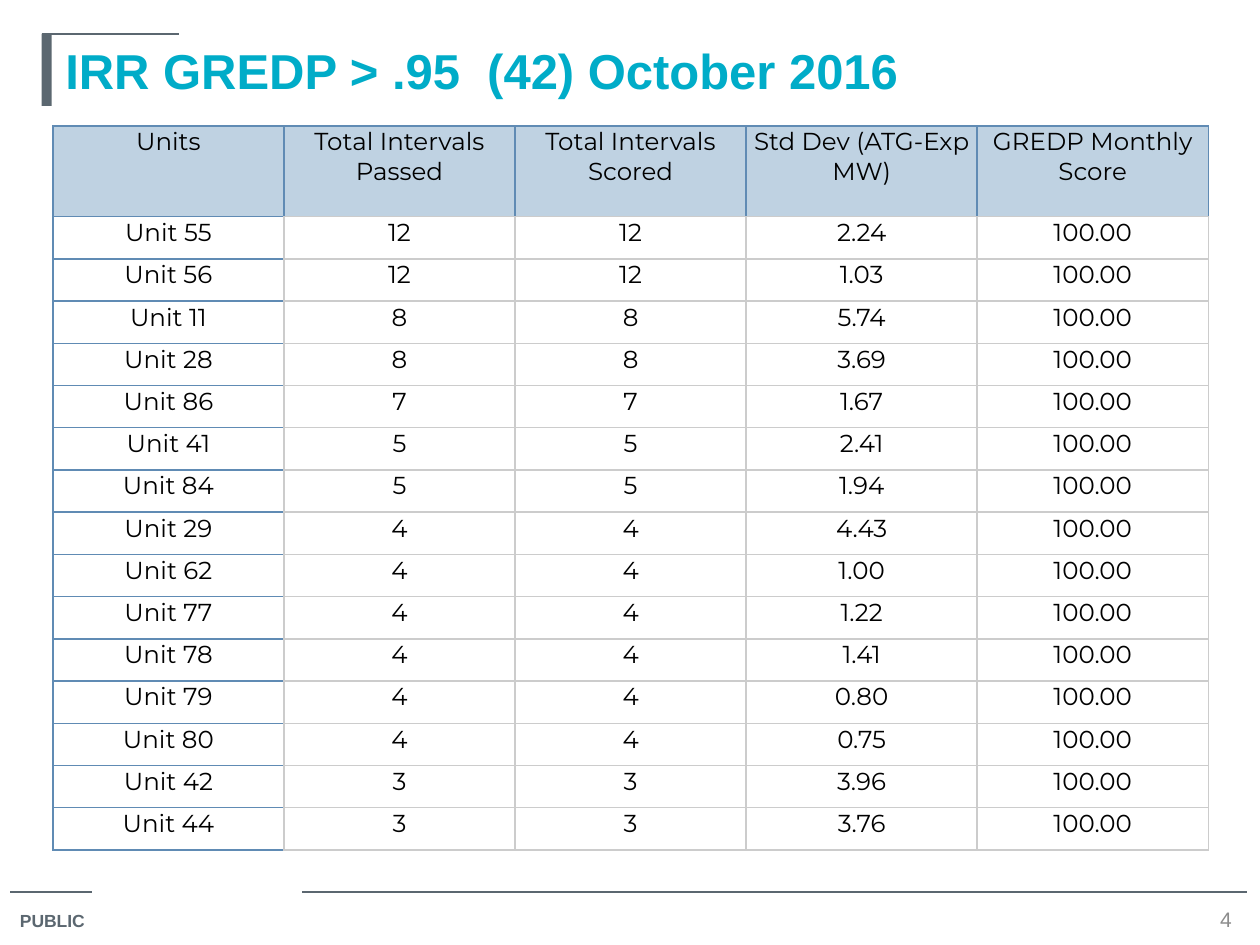
"""Build the October 2016 IRR GREDP unit score slide."""
from lxml import etree
from pptx import Presentation
from pptx.dml.color import RGBColor
from pptx.enum.shapes import MSO_CONNECTOR, MSO_SHAPE
from pptx.enum.text import MSO_ANCHOR, PP_ALIGN
from pptx.oxml.ns import qn
from pptx.util import Inches, Pt

STRAIGHT = MSO_CONNECTOR.STRAIGHT
RECTANGLE = MSO_SHAPE.RECTANGLE
TOP, MIDDLE = MSO_ANCHOR.TOP, MSO_ANCHOR.MIDDLE
LEFT, CENTER = PP_ALIGN.LEFT, PP_ALIGN.CENTER

SLATE = RGBColor(0x5B, 0x67, 0x70)
TEAL = RGBColor(0x00, 0xAC, 0xC8)
GRAY = RGBColor(0x8C, 0x8C, 0x8C)
BLACK = RGBColor(0x00, 0x00, 0x00)
HEADER_FILL = RGBColor(0xBF, 0xD2, 0xE2)
BLUE_BORDER = RGBColor(0x60, 0x8B, 0xB4)
GRAY_BORDER = RGBColor(0xCC, 0xCC, 0xCC)

HEADERS = ["Units", "Total Intervals Passed", "Total Intervals Scored",
           "Std Dev (ATG-Exp MW)", "GREDP Monthly Score"]
UNITS = [
    ("Unit 55", "12", "12", "2.24", "100.00"),
    ("Unit 56", "12", "12", "1.03", "100.00"),
    ("Unit 11", "8", "8", "5.74", "100.00"),
    ("Unit 28", "8", "8", "3.69", "100.00"),
    ("Unit 86", "7", "7", "1.67", "100.00"),
    ("Unit 41", "5", "5", "2.41", "100.00"),
    ("Unit 84", "5", "5", "1.94", "100.00"),
    ("Unit 29", "4", "4", "4.43", "100.00"),
    ("Unit 62", "4", "4", "1.00", "100.00"),
    ("Unit 77", "4", "4", "1.22", "100.00"),
    ("Unit 78", "4", "4", "1.41", "100.00"),
    ("Unit 79", "4", "4", "0.80", "100.00"),
    ("Unit 80", "4", "4", "0.75", "100.00"),
    ("Unit 42", "3", "3", "3.96", "100.00"),
    ("Unit 44", "3", "3", "3.76", "100.00"),
]
RULES = [(0.08, 0.73, 7.08), (2.4, 9.9, 7.08), (0.33, 1.42, 0.27)]
ACCENT_BAR = (0.33, 0.27, 0.08, 0.57)
TEXTS = [
    ("PUBLIC", (0.06, 7.17, 0.77, 0.28), (0.1, 0.05), TOP, LEFT,
     {"name": "Arial", "size": Pt(10), "bold": True}, SLATE),
    ("4", (9.58, 7.18, 0.3, 0.23), (0, 0), MIDDLE, CENTER,
     {"name": "Arial", "size": Pt(12)}, GRAY),
    ("IRR GREDP > .95  (42) October 2016", (0.42, 0.27, 9.25, 0.73), (0.1, 0.05), TOP, LEFT,
     {"name": "Arial", "size": Pt(28), "bold": True}, TEAL),
]
TABLE_BOX = (0.42, 1, 9.17, 5.75)
HEADER_HEIGHT = 0.72
CELL_FONT = {"name": "Montserrat", "size": Pt(14)}
CELL_MARGINS = {"margin_left": Inches(0.01), "margin_top": Inches(0.01),
                "margin_right": Inches(0.01), "margin_bottom": 0}


def set_all(target, values):
    for name, value in values.items():
        setattr(target, name, value)


def write(text_frame, text, alignment, font, color):
    paragraph = text_frame.paragraphs[0]
    paragraph.alignment = alignment
    run = paragraph.add_run()
    run.text = text
    set_all(run.font, font)
    run.font.color.rgb = color


def add_text(slide, text, box, insets, anchor, alignment, font, color):
    text_frame = slide.shapes.add_textbox(*map(Inches, box)).text_frame
    horizontal, vertical = map(Inches, insets)
    set_all(text_frame, {"word_wrap": True, "vertical_anchor": anchor,
                         "margin_left": horizontal, "margin_right": horizontal,
                         "margin_top": vertical, "margin_bottom": vertical})
    write(text_frame, text, alignment, font, color)


def add_rule(slide, start, end, height):
    rule = slide.shapes.add_connector(
        STRAIGHT, Inches(start), Inches(height), Inches(end), Inches(height))
    rule.line.color.rgb = SLATE
    rule.line.width = Pt(0.75)
    etree.SubElement(rule._element.spPr, qn("a:effectLst"))


def border_colors(row, column):
    if row == 0:
        bottom = GRAY_BORDER if column else BLUE_BORDER
        return {"L": BLUE_BORDER, "R": BLUE_BORDER, "T": BLUE_BORDER, "B": bottom}
    edge = GRAY_BORDER if column else BLUE_BORDER
    return {"L": edge, "R": GRAY_BORDER, "T": edge, "B": edge}


def set_borders(cell, colors):
    properties = cell._tc.get_or_add_tcPr()
    for side, color in colors.items():
        line = etree.SubElement(properties, qn(f"a:ln{side}"), w=str(Pt(1)))
        fill = etree.SubElement(line, qn("a:solidFill"))
        etree.SubElement(fill, qn("a:srgbClr"), val=str(color))


def add_score_table(slide):
    rows = [HEADERS, *UNITS]
    width, height = TABLE_BOX[2:]
    table = slide.shapes.add_table(len(rows), len(HEADERS), *map(Inches, TABLE_BOX)).table
    set_all(table, {"first_row": False, "horz_banding": False})
    for column in table.columns:
        column.width = Inches(width / len(HEADERS))
    for row in table.rows:
        row.height = Inches((height - HEADER_HEIGHT) / len(UNITS))
    table.rows[0].height = Inches(HEADER_HEIGHT)
    for row_index, values in enumerate(rows):
        for column_index, value in enumerate(values):
            cell = table.cell(row_index, column_index)
            set_all(cell, CELL_MARGINS)
            set_borders(cell, border_colors(row_index, column_index))
            if row_index == 0:
                cell.fill.solid()
                cell.fill.fore_color.rgb = HEADER_FILL
            else:
                cell.fill.background()
            write(cell.text_frame, value, CENTER, CELL_FONT, BLACK)


def main():
    presentation = Presentation()
    presentation.slide_width, presentation.slide_height = Inches(10), Inches(7.5)
    slide = presentation.slides.add_slide(presentation.slide_layouts[6])
    for rule in RULES:
        add_rule(slide, *rule)
    bar = slide.shapes.add_shape(RECTANGLE, *map(Inches, ACCENT_BAR))
    bar.shadow.inherit = False
    bar.fill.solid()
    bar.fill.fore_color.rgb = SLATE
    bar.line.fill.background()
    for text in TEXTS:
        add_text(slide, *text)
    add_score_table(slide)
    presentation.save("out.pptx")


if __name__ == "__main__":
    main()
